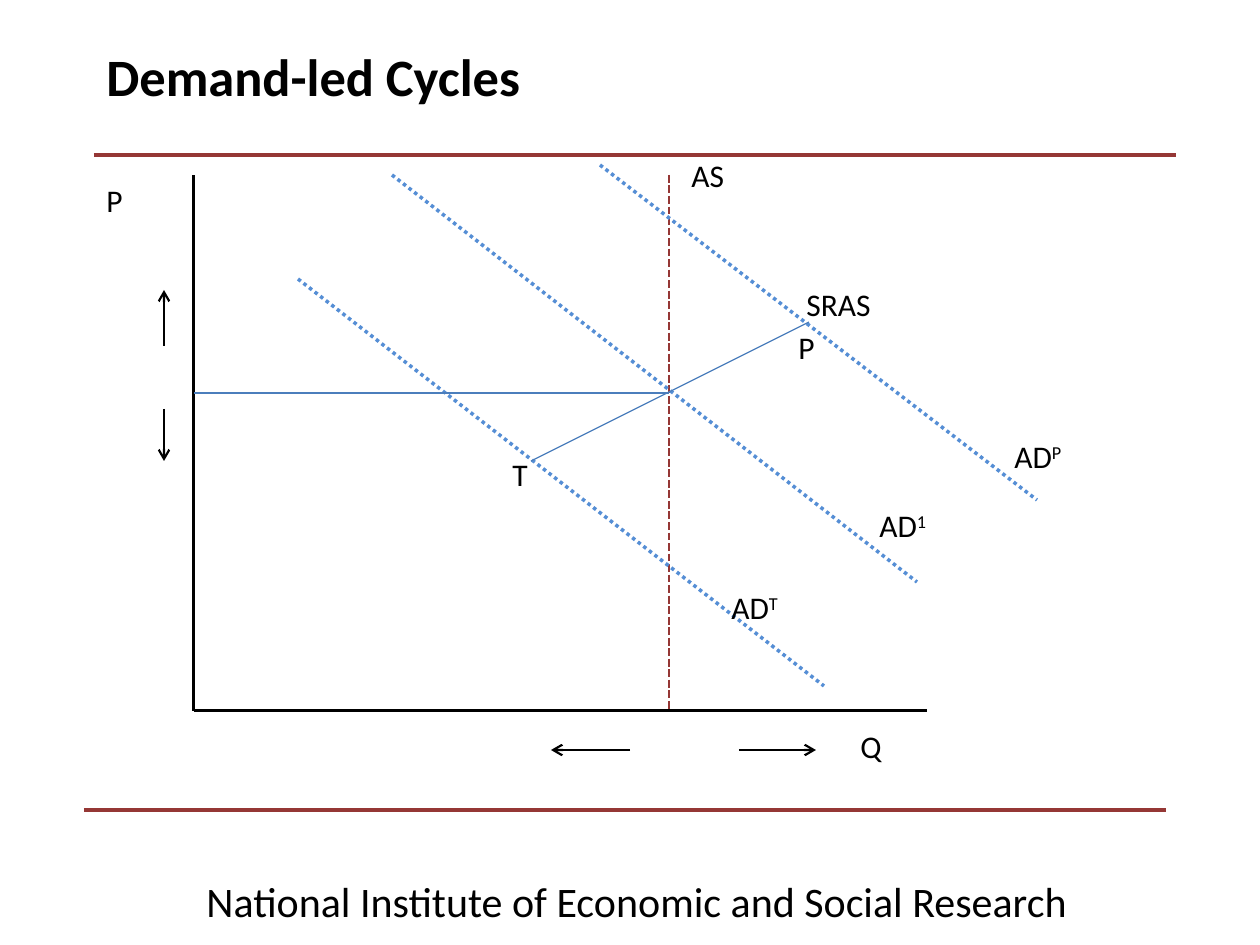
from dataclasses import dataclass
from lxml.etree import SubElement
from pptx import Presentation
from pptx.dml.color import RGBColor
from pptx.enum.dml import MSO_LINE
from pptx.enum.shapes import MSO_CONNECTOR
from pptx.oxml.ns import qn
from pptx.util import Emu, Pt


@dataclass(frozen=True)
class Theme:
    """Colours, font and sizes of the slide."""
    ink: str = "000000"
    red: str = "953735"
    blue: str = "558ED5"
    steel: str = "4B7EBC"
    font: str = "Calibri"
    title: int = 30
    foot: int = 24
    label: int = 18


THEME = Theme()
SCALE = 914400 / 126
LEFT, TOP, BASE = 194, 175, 711
MID, PRICE = 669, 393
FLOW = 750
SIDE = 164


def px(num):
    """Turn px into EMU."""
    return Emu(round(num * SCALE))


def add_line(slide, start, end, color, width, dash=None, arrow=False):
    """Draw a straight line, dashed or with an arrowhead if asked."""
    line = slide.shapes.add_connector(
        MSO_CONNECTOR.STRAIGHT, *map(px, start + end))
    line.line.color.rgb = RGBColor.from_string(color)
    line.line.width = Pt(width)
    if dash:
        line.line.dash_style = dash
    if arrow:
        SubElement(line.line._get_or_add_ln(), qn("a:tailEnd"), type="arrow")
    SubElement(line._element.spPr, qn("a:effectLst"))


def add_text(slide, text, box, size=THEME.label, bold=False, power=None):
    """Place a text box, with a superscript if asked."""
    frame = slide.shapes.add_textbox(*map(px, box)).text_frame
    frame.word_wrap = True
    para = frame.paragraphs[0]
    para.text = text
    if power:
        run = para.add_run()
        run.text = power
        run._r.get_or_add_rPr().set("baseline", "30000")
    for run in para.runs:
        run.font.name = THEME.font
        run.font.size = Pt(size)
        run.font.bold = bold
        run.font.color.rgb = RGBColor.from_string(THEME.ink)


def add_frame(slide):
    """Add the title, the footer and their rules."""
    for left, top in ((94, 155), (84, 810)):
        add_line(slide, (left, top), (left + 1082, top), THEME.red, 2.25)
    add_text(slide, "Demand-led Cycles", (94, 38, 1134, 157),
             THEME.title, bold=True)
    add_text(slide, "National Institute of Economic and Social Research",
             (194, 869, 1002, 50), THEME.foot)


def add_curves(slide):
    """Draw the axes, the supply lines and the demand lines."""
    for end in ((LEFT, TOP), (927, BASE)):
        add_line(slide, (LEFT, BASE), end, THEME.ink, 1.75)
    add_line(slide, (MID, TOP), (MID, BASE), THEME.red, 1.5,
             MSO_LINE.SQUARE_DOT)
    for start, end in (((392, TOP), (917, 582)), ((298, 279), (824, 686)),
                       ((600, 165), (1037, 500))):
        add_line(slide, start, end, THEME.blue, 2, MSO_LINE.ROUND_DOT)
    add_line(slide, (531, 461), (809, 322), THEME.steel, 0.75)
    add_line(slide, (MID, PRICE), (LEFT, PRICE), THEME.steel, 0.75)


def add_arrows(slide):
    """Draw the arrows for rising and falling price and output."""
    for start, end in (((SIDE, 409), (SIDE, 461)), ((SIDE, 346), (SIDE, 290)),
                       ((630, FLOW), (551, FLOW)), ((739, FLOW), (816, FLOW))):
        add_line(slide, start, end, THEME.ink, 1.25, arrow=True)


def add_labels(slide):
    """Name the axes, the curves and the turning points."""
    for text, power, left, top, width in (
            ("P", None, 94, 175, 69), ("Q", None, 848, 721, 69),
            ("AS", None, 679, 150, 149), ("SRAS", None, 794, 279, 92),
            ("P", None, 786, 322, 30), ("T", None, 500, 449, 30),
            ("AD", "1", 867, 500, 149), ("AD", "P", 1002, 431, 149),
            ("AD", "T", 719, 582, 149)):
        add_text(slide, text, (left, top, width, 50), power=power)


def main():
    """Build and save the slide."""
    deck = Presentation()
    deck.slide_width, deck.slide_height = px(1260), px(945)
    slide = deck.slides.add_slide(deck.slide_layouts[6])
    add_frame(slide)
    add_curves(slide)
    add_arrows(slide)
    add_labels(slide)
    deck.save("out.pptx")


if __name__ == "__main__":
    main()
